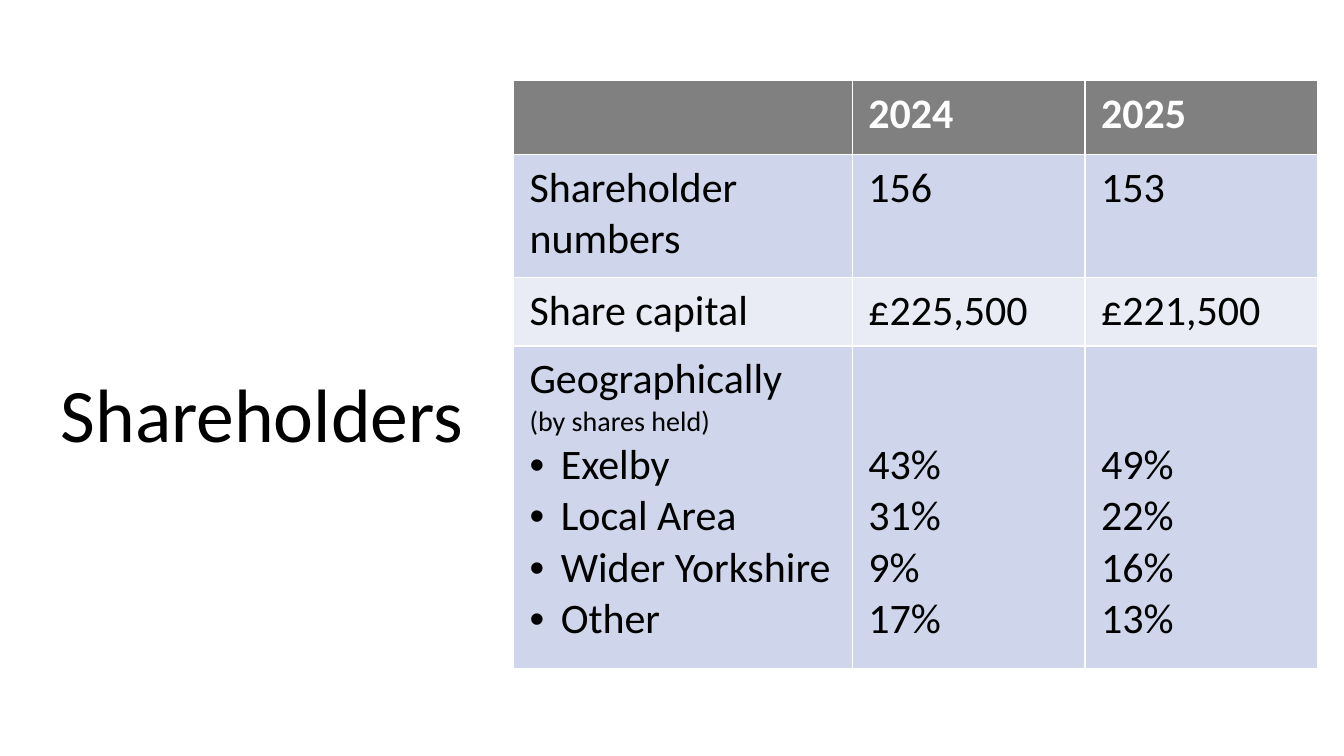
from dataclasses import dataclass

from lxml.etree import SubElement
from pptx import Presentation
from pptx.dml.color import RGBColor
from pptx.enum.text import MSO_ANCHOR, MSO_AUTO_SIZE, PP_ALIGN
from pptx.oxml.ns import qn
from pptx.util import Inches, Pt

SLIDE_WIDTH, SLIDE_HEIGHT = Inches(13.33), Inches(7.5)
COLUMNS = [Inches(width) for width in (3.36, 2.31, 2.31)]
ROWS = [Inches(height) for height in (0.73, 1.22, 0.68, 3.2)]
MARGIN_X, MARGIN_Y = Inches(0.16), Inches(0.08)
BULLET_INDENT = Inches(0.31)
REGION_HEADING_HEIGHT = Inches(0.85)


@dataclass(frozen=True)
class Theme:
    font: str = "Calibri"
    title_size: int = 54
    body_size: int = 30
    note_size: int = 20
    ink: str = "000000"
    header_ink: str = "FFFFFF"
    header_fill: str = "808080"
    bands: tuple = ("CFD5EA", "E9EBF5")


THEME = Theme()

REGIONS = [
    ("Exelby", "43%", "49%"),
    ("Local Area", "31%", "22%"),
    ("Wider Yorkshire", "9%", "16%"),
    ("Other", "17%", "13%"),
]
REGION_NAMES, SHARES_2024, SHARES_2025 = zip(*REGIONS)
SUMMARY = [
    ("", "2024", "2025"),
    ("Shareholder numbers", "156", "153"),
    ("Share capital", "£225,500", "£221,500"),
    ("Geographically", "\n".join(SHARES_2024), "\n".join(SHARES_2025)),
]


def style(para, size, color=THEME.ink, bold=False):
    font = para.font
    font.name, font.size, font.bold = THEME.font, Pt(size), bold
    font.color.rgb = RGBColor.from_string(color)


def add_title(page, text):
    title = page.shapes.title
    title.left, title.top = int(SLIDE_WIDTH * 0.035), int(SLIDE_HEIGHT * 0.093)
    title.width, title.height = int(SLIDE_WIDTH * 0.32), int(SLIDE_HEIGHT * 0.52)
    frame = title.text_frame
    frame.text = text
    frame.word_wrap = True
    frame.auto_size = MSO_AUTO_SIZE.NONE
    frame.vertical_anchor = MSO_ANCHOR.BOTTOM
    para = frame.paragraphs[0]
    para.alignment = PP_ALIGN.CENTER
    para.line_spacing = 0.9
    style(para, THEME.title_size)


def add_bullet(para):
    properties = para._p.get_or_add_pPr()
    properties.set("marL", str(BULLET_INDENT))
    properties.set("indent", str(-BULLET_INDENT))
    SubElement(properties, qn("a:buFont"), typeface="Arial")
    SubElement(properties, qn("a:buChar"), char="•")


def fill_cell(cell, text, fill, color, bold):
    cell.margin_left = cell.margin_right = MARGIN_X
    cell.margin_top = cell.margin_bottom = MARGIN_Y
    cell.fill.solid()
    cell.fill.fore_color.rgb = RGBColor.from_string(fill)
    cell.text = text
    for para in cell.text_frame.paragraphs:
        style(para, THEME.body_size, color, bold)


def add_regions(cell):
    """Add the note and the bulleted regions below the cell's heading."""
    frame = cell.text_frame
    note = frame.add_paragraph()
    note.text = "(by shares held)"
    style(note, THEME.note_size)
    for name in REGION_NAMES:
        para = frame.add_paragraph()
        para.text = name
        add_bullet(para)
        style(para, THEME.body_size)


def add_summary_table(page):
    table = page.shapes.add_table(
        len(ROWS), len(COLUMNS),
        int(SLIDE_WIDTH * 0.382), int(SLIDE_HEIGHT * 0.107),
        sum(COLUMNS), sum(ROWS),
    ).table
    for column, width in zip(table.columns, COLUMNS):
        column.width = width
    for index, (row, height, texts) in enumerate(zip(table.rows, ROWS, SUMMARY)):
        row.height = height
        header = index == 0
        fill = THEME.header_fill if header else THEME.bands[(index - 1) % 2]
        color = THEME.header_ink if header else THEME.ink
        for cell, text in zip(row.cells, texts):
            fill_cell(cell, text, fill, color, bold=header)

    region_row = len(ROWS) - 1
    add_regions(table.cell(region_row, 0))
    for column in range(1, len(COLUMNS)):
        table.cell(region_row, column).margin_top = MARGIN_Y + REGION_HEADING_HEIGHT


def main():
    deck = Presentation()
    deck.slide_width, deck.slide_height = SLIDE_WIDTH, SLIDE_HEIGHT
    page = deck.slides.add_slide(deck.slide_layouts.get_by_name("Title Only"))
    add_title(page, "Shareholders")
    add_summary_table(page)
    deck.save("out.pptx")


if __name__ == "__main__":
    main()
